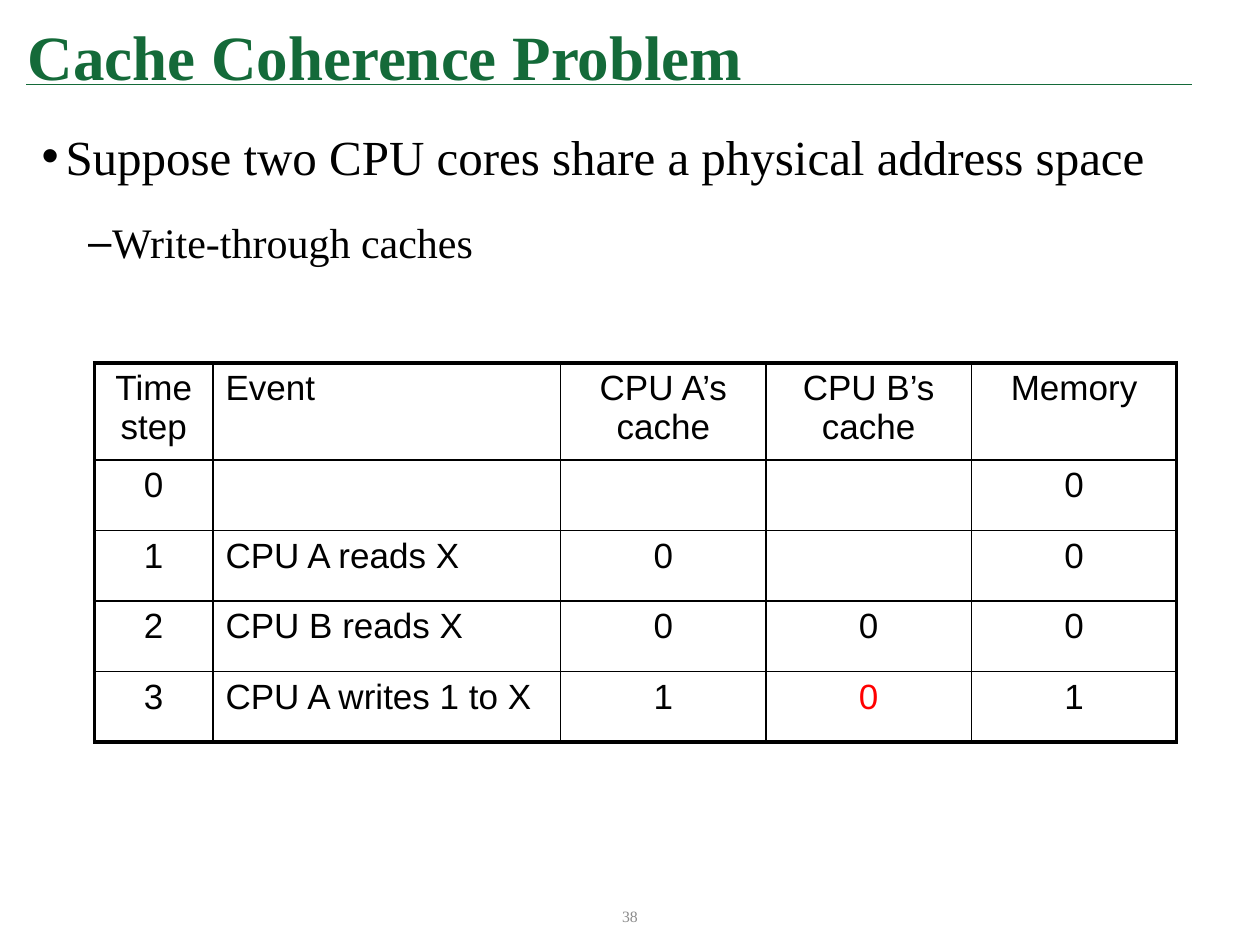
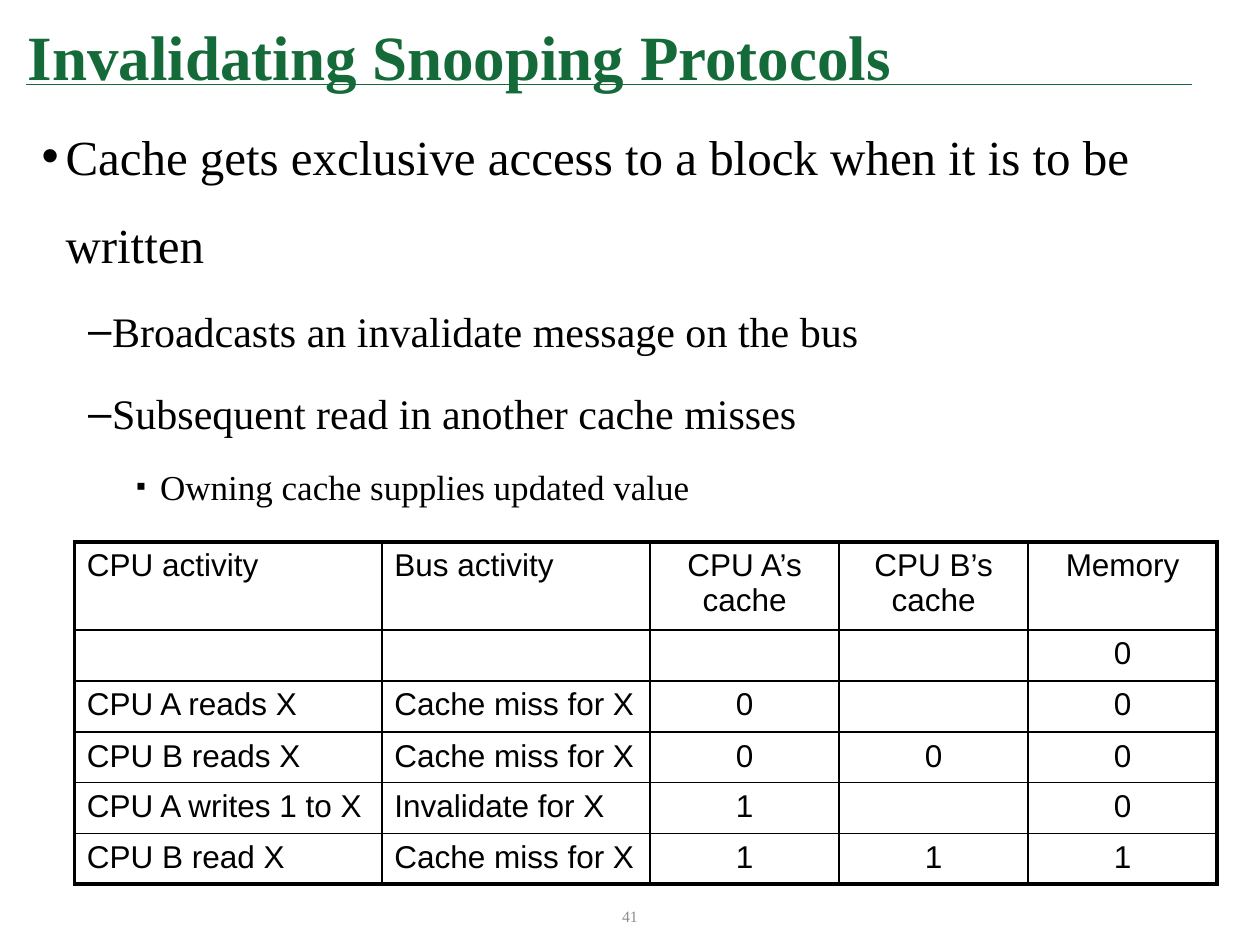
from lxml.etree import SubElement
from pptx import Presentation
from pptx.dml.color import RGBColor
from pptx.enum.shapes import MSO_CONNECTOR as Link
from pptx.enum.text import MSO_ANCHOR as Anchor, MSO_AUTO_SIZE as Fit, PP_ALIGN as Align
from pptx.oxml import parse_xml
from pptx.oxml.ns import nsdecls, qn
from pptx.util import Inches, Pt

COLORS = {"green": "146A39", "ink": "000000", "gray": "8C8C8C", "red": "FF0000"}
SERIF, SANS = "Times New Roman", "Arial"
THICK, THIN = 2.25, 1
HANG = 0.19
# level: bullet, its size in percent, text indent, text size, space before
LEVELS = [
    ("•", 100, 0.19, 28, 7.5),
    ("–", 100, 0.56, 24, 3.7),
    ("▪", 80, 0.94, 20, 3.7),
]

SLIDES = [
    {
        "title": "Cache Coherence Problem",
        "number": "38",
        "points": [
            (0, "Suppose two CPU cores share a physical address space"),
            (1, "Write-through caches"),
        ],
        "table": {
            "at": (0.75, 2.88), "size": 20, "left": {1}, "stale": {(4, 3)},
            "cols": [0.94, 2.76] + [1.63] * 3, "heights": [0.77] + [0.56] * 4,
            "rows": [
                ["Time step", "Event", "CPU A’s cache", "CPU B’s cache", "Memory"],
                ["0", "", "", "", "0"],
                ["1", "CPU A reads X", "0", "", "0"],
                ["2", "CPU B reads X", "0", "0", "0"],
                ["3", "CPU A writes 1 to X", "1", "0", "1"],
            ],
        },
    },
    {
        "title": "Invalidating Snooping Protocols",
        "number": "41",
        "points": [
            (0, "Cache gets exclusive access to a block when it is to be written"),
            (1, "Broadcasts an invalidate message on the bus"),
            (1, "Subsequent read in another cache misses"),
            (2, "Owning cache supplies updated value"),
        ],
        "table": {
            "at": (0.59, 4.3), "size": 18, "left": {0, 1}, "stale": set(),
            "cols": [2.44, 2.13] + [1.5] * 3, "heights": [0.7] + [0.4] * 5,
            "rows": [
                ["CPU activity", "Bus activity", "CPU A’s cache", "CPU B’s cache", "Memory"],
                ["", "", "", "", "0"],
                ["CPU A reads X", "Cache miss for X", "0", "", "0"],
                ["CPU B reads X", "Cache miss for X", "0", "0", "0"],
                ["CPU A writes 1 to X", "Invalidate for X", "1", "", "0"],
                ["CPU B read X", "Cache miss for X", "1", "1", "1"],
            ],
        },
    },
]


def color(name):
    return RGBColor.from_string(COLORS[name])


def style(para, size, tint="ink", face=SERIF, bold=False):
    for run in para.runs:
        font = run.font
        font.name, font.size, font.bold = face, Pt(size), bold
        font.color.rgb = color(tint)


def place(shape, left, top, width, height):
    shape.left, shape.top = Inches(left), Inches(top)
    shape.width, shape.height = Inches(width), Inches(height)


def add_title(slide, text):
    title = slide.shapes.title
    place(title, 0.12, 0.07, 9.19, 0.73)
    frame = title.text_frame
    frame.text = text
    frame.auto_size, frame.vertical_anchor = Fit.NONE, Anchor.MIDDLE
    para = frame.paragraphs[0]
    para.alignment = Align.LEFT
    style(para, 36, "green", bold=True)

    rule = slide.shapes.add_connector(
        Link.STRAIGHT, Inches(0.21), Inches(0.67), Inches(9.46), Inches(0.67))
    rule.line.color.rgb, rule.line.width = color("green"), Pt(1)
    SubElement(rule.element.spPr, qn("a:effectLst"))


def add_points(slide, points):
    body = slide.placeholders[1]
    place(body, 0.23, 0.72, 9.56, 6.28)
    frame = body.text_frame
    frame.text = "\n".join(text for _, text in points)
    frame.auto_size = Fit.NONE
    for i, (para, (level, _)) in enumerate(zip(frame.paragraphs, points)):
        mark, scale, indent, size, gap = LEVELS[level]
        para.level, para.line_spacing = level, 1.5
        para.space_before = Pt(gap if i else 0)
        props = para._p.get_or_add_pPr()
        props.set("marL", str(Inches(indent)))
        props.set("indent", str(-Inches(HANG)))
        SubElement(props, qn("a:buSzPct"), val=str(scale * 1000))
        SubElement(props, qn("a:buFont"), typeface=SANS)
        SubElement(props, qn("a:buChar"), char=mark)
        style(para, size)


def set_edges(cell, outer):
    """Draw the four cell borders, thick on the sides named in outer."""
    props = cell._tc.get_or_add_tcPr()
    for i, side in enumerate("LRTB"):
        width = Pt(THICK if side in outer else THIN)
        props.insert(i, parse_xml(
            f'<a:ln{side} {nsdecls("a")} w="{width}"><a:solidFill>'
            f'<a:srgbClr val="{COLORS["ink"]}"/></a:solidFill></a:ln{side}>'))


def add_grid(slide, spec):
    rows, cols, heights = spec["rows"], spec["cols"], spec["heights"]
    box = (*spec["at"], sum(cols), sum(heights))
    table = slide.shapes.add_table(len(rows), len(cols), *map(Inches, box)).table
    table.first_row = table.horz_banding = False
    for col, width in zip(table.columns, cols):
        col.width = Inches(width)
    for row, height in zip(table.rows, heights):
        row.height = Inches(height)
    for r, row in enumerate(rows):
        for c, text in enumerate(row):
            cell = table.cell(r, c)
            cell.text = text
            cell.fill.background()
            para = cell.text_frame.paragraphs[0]
            para.alignment = Align.LEFT if c in spec["left"] else Align.CENTER
            style(para, spec["size"], "red" if (r, c) in spec["stale"] else "ink", SANS)
            ends = {"L": c == 0, "R": c == len(cols) - 1,
                    "T": r == 0, "B": r == len(rows) - 1}
            set_edges(cell, {side for side, end in ends.items() if end})


def add_number(slide, text):
    box = slide.shapes.add_textbox(*map(Inches, (3.73, 7.07, 2.54, 0.4)))
    frame = box.text_frame
    frame.text = text
    frame.word_wrap, frame.vertical_anchor = True, Anchor.MIDDLE
    para = frame.paragraphs[0]
    para.alignment = Align.CENTER
    style(para, 9, "gray")


def main():
    deck = Presentation()
    deck.slide_width, deck.slide_height = Inches(10), Inches(7.5)
    for data in SLIDES:
        slide = deck.slides.add_slide(deck.slide_layouts[1])
        add_title(slide, data["title"])
        add_points(slide, data["points"])
        add_grid(slide, data["table"])
        add_number(slide, data["number"])
    deck.save("out.pptx")


if __name__ == "__main__":
    main()
